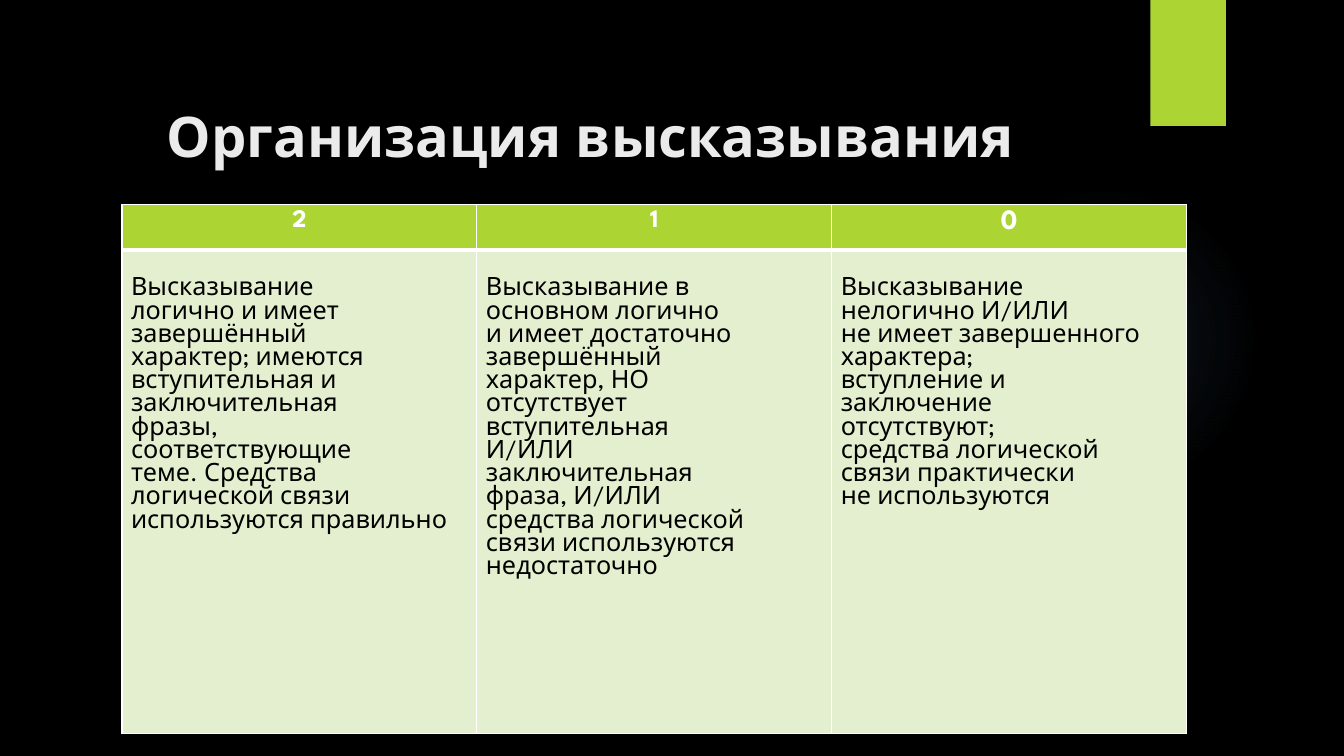
from lxml import etree
from pptx import Presentation
from pptx.dml.color import RGBColor
from pptx.enum.shapes import MSO_SHAPE as Shape
from pptx.enum.text import MSO_ANCHOR as Anchor, PP_ALIGN as Align
from pptx.oxml import parse_xml
from pptx.oxml.ns import nsdecls, qn
from pptx.util import Inches, Pt

BLACK = RGBColor(0x00, 0x00, 0x00)
WHITE = RGBColor(0xFF, 0xFF, 0xFF)
LIME = RGBColor(0xAC, 0xD4, 0x33)
PALE_LIME = RGBColor(0xE3, 0xEF, 0xCE)
TITLE_GREY = RGBColor(0xEB, 0xEB, 0xEB)
GLOW_BLUE = RGBColor(0x7A, 0xC4, 0xF0)
FONT = "League Spartan"

# Each score: heading, heading size, lines of the criterion
SCORES = [
    ("2", 18, [
        "Высказывание", "логично и имеет", "завершённый", "характер; имеются",
        "вступительная и", "заключительная", "фразы,", "соответствующие",
        "теме. Средства", "логической связи используются правильно",
    ]),
    ("1", 18, [
        "Высказывание в", "основном логично", "и имеет достаточно",
        "завершённый", "характер, НО", "отсутствует", "вступительная",
        "И/ИЛИ", "заключительная", "фраза, И/ИЛИ", "средства логической",
        "связи используются", "недостаточно",
    ]),
    ("0", 20, [
        "Высказывание", "нелогично И/ИЛИ", "не имеет завершенного характера;",
        "вступление и", "заключение", "отсутствуют;", "средства логической",
        "связи практически", "не используются",
    ]),
]


def add_plain_shape(page, kind, left, top, width, height):
    shape = page.shapes.add_shape(
        kind, Inches(left), Inches(top), Inches(width), Inches(height))
    shape.shadow.inherit = False
    shape.line.fill.background()
    return shape


def add_glow(page):
    glow = add_plain_shape(page, Shape.OVAL, 9.41, 1.83, 3.08, 3.08)
    stops = "".join(
        f'<a:gs pos="{position * 1000}"><a:srgbClr val="{GLOW_BLUE}">'
        f'<a:alpha val="{alpha * 1000}"/></a:srgbClr></a:gs>'
        for position, alpha in [(0, 7), (36, 6), (69, 0)])
    gradient = parse_xml(
        f'<a:gradFill {nsdecls("a")}><a:gsLst>{stops}</a:gsLst>'
        '<a:path path="circle"><a:fillToRect l="50000" t="50000" '
        'r="50000" b="50000"/></a:path></a:gradFill>')
    glow.element.spPr.find(qn("a:prstGeom")).addnext(gradient)


def write_lines(frame, lines, size, color, bold, align):
    frame.text = "\n".join(lines)
    for para in frame.paragraphs:
        para.alignment = align
        for span in para.runs:
            span.font.name = FONT
            span.font.size = Pt(size)
            span.font.bold = bold
            span.font.color.rgb = color


def add_title(page, text):
    box = page.shapes.add_textbox(
        Inches(0.71), Inches(0.22), Inches(10.29), Inches(1.5))
    frame = box.text_frame
    frame.word_wrap = True
    frame.vertical_anchor = Anchor.BOTTOM
    write_lines(frame, [text], 40, TITLE_GREY, True, Align.CENTER)


def style_cell(cell, fill, bottom_width, top_margin):
    cell.margin_left = cell.margin_right = Inches(0.09)
    cell.margin_top = Inches(top_margin)
    cell.margin_bottom = Inches(0.05)
    properties = cell._tc.get_or_add_tcPr()
    for side, width in zip("LRTB", (1, 1, 1, bottom_width)):
        border = etree.SubElement(properties, qn(f"a:ln{side}"), w=str(Pt(width)))
        solid = etree.SubElement(border, qn("a:solidFill"))
        etree.SubElement(solid, qn("a:srgbClr"), val=str(WHITE))
    cell.fill.solid()
    cell.fill.fore_color.rgb = fill


def add_score_table(page):
    table = page.shapes.add_table(
        2, len(SCORES), Inches(1.21), Inches(2.03),
        Inches(10.56), Inches(5.25)).table
    for row, height in zip(table.rows, (0.45, 4.8)):
        row.height = Inches(height)
    for index, (score, size, lines) in enumerate(SCORES):
        table.columns[index].width = Inches(3.52)
        heading, criterion = table.cell(0, index), table.cell(1, index)
        style_cell(heading, LIME, 3, 0.05)
        write_lines(heading.text_frame, [score], size, WHITE, True, Align.CENTER)
        style_cell(criterion, PALE_LIME, 1, 0.28)
        write_lines(criterion.text_frame, lines, 18, BLACK, False, Align.LEFT)


def main():
    deck = Presentation()
    deck.slide_width, deck.slide_height = Inches(13.33), Inches(7.5)
    page = deck.slides.add_slide(deck.slide_layouts[6])

    # Backdrop
    page.background.fill.solid()
    page.background.fill.fore_color.rgb = BLACK
    add_glow(page)
    tab = add_plain_shape(page, Shape.RECTANGLE, 11.41, 0, 0.75, 1.25)
    tab.fill.solid()
    tab.fill.fore_color.rgb = LIME

    # Content
    add_title(page, "Организация высказывания")
    add_score_table(page)

    deck.save("out.pptx")


if __name__ == "__main__":
    main()
